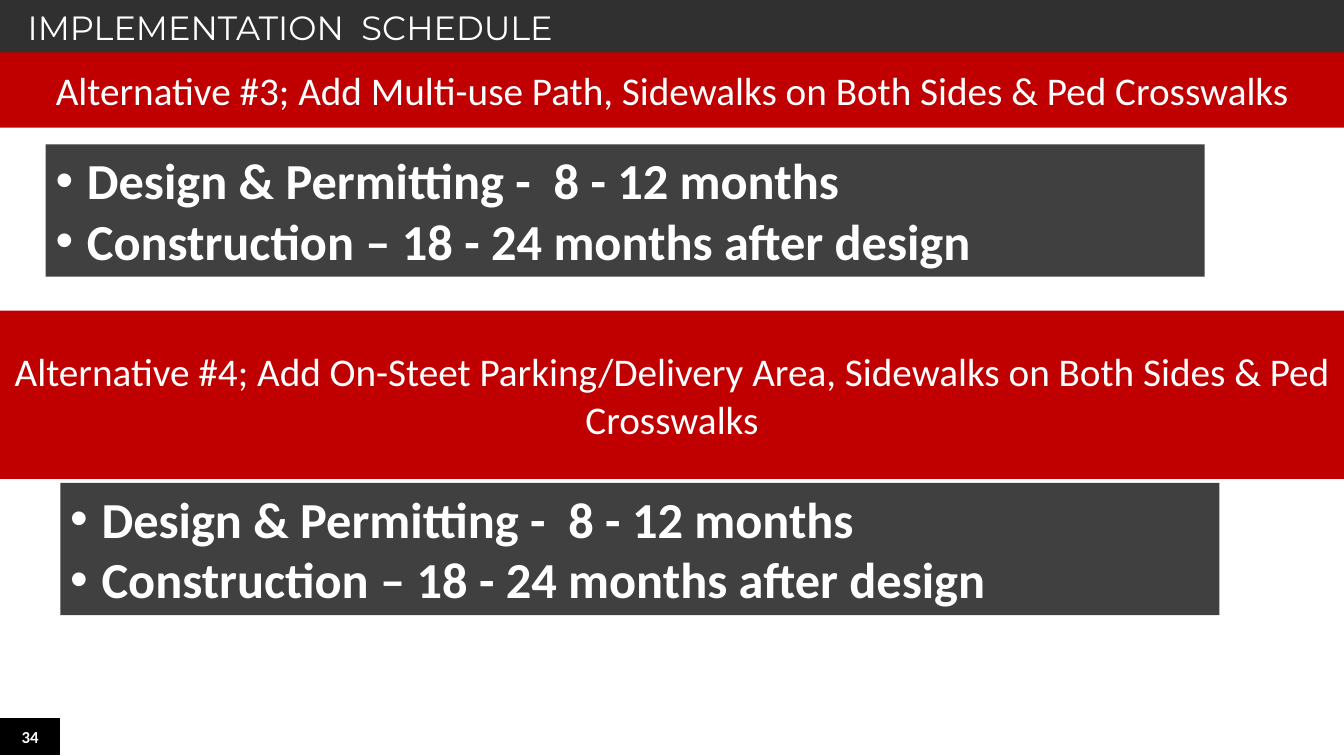
from lxml import etree
from pptx import Presentation
from pptx import util as u
from pptx.dml.color import RGBColor
from pptx.enum import shapes, text
from pptx.oxml.ns import qn

PAGE_WIDTH, PAGE_HEIGHT = 33.87, 19.05
WHITE, BLACK, RED = "FFFFFF", "000000", "C00000"
TITLE_GRAY, LIST_GRAY = "303030", "404040"

PHASES = [
    "Design & Permitting -  8 - 12 months",
    "Construction – 18 - 24 months after design",
]
# heading, heading top and height, phase list left and top
ALTERNATIVES = [
    ("Alternative #3; Add Multi-use Path, Sidewalks on Both Sides & Ped Crosswalks",
     1.32, 1.9, 1.15, 3.64),
    ("Alternative #4; Add On-Steet Parking/Delivery Area, Sidewalks on Both Sides & Ped Crosswalks",
     7.83, 4.24, 1.52, 12.17),
]


def color(value):
    return RGBColor.from_string(value)


def add_panel(page, box, fill, lines, size, font="Calibri", bold=False,
              align=text.PP_ALIGN.LEFT):
    """Add a filled rectangle with white text, one paragraph per line."""
    panel = page.shapes.add_shape(shapes.MSO_SHAPE.RECTANGLE, *map(u.Cm, box))
    panel.shadow.inherit = False
    panel.fill.solid()
    panel.fill.fore_color.rgb = color(fill)
    panel.line.fill.background()
    frame = panel.text_frame
    frame.word_wrap = True
    frame.vertical_anchor = text.MSO_ANCHOR.MIDDLE
    frame.text = "\n".join(lines)
    for para in frame.paragraphs:
        para.alignment = align
        para.font.name = font
        para.font.size = u.Pt(size)
        para.font.bold = bold
        para.font.color.rgb = color(WHITE)
    return panel


def add_bullet(para, indent):
    properties = para._p.get_or_add_pPr()
    properties.set("marL", str(indent))
    properties.set("indent", str(-indent))
    bullet_font = etree.Element(qn("a:buFont"), typeface="Arial")
    bullet = etree.Element(qn("a:buChar"), char="•")
    properties.insert(0, bullet_font)
    bullet_font.addnext(bullet)


def add_title(page, box):
    title = add_panel(page, box, TITLE_GRAY, ["IMPLEMENTATION  SCHEDULE"], 24, "Montserrat")
    title.text_frame.margin_left = u.Cm(0.7)


def add_heading(page, box, heading):
    add_panel(page, box, RED, [heading], 28, align=text.PP_ALIGN.CENTER)


def add_phases(page, box):
    panel = add_panel(page, box, LIST_GRAY, PHASES, 36, bold=True)
    panel.text_frame.vertical_anchor = text.MSO_ANCHOR.TOP
    panel.text_frame.auto_size = text.MSO_AUTO_SIZE.SHAPE_TO_FIT_TEXT
    for para in panel.text_frame.paragraphs:
        add_bullet(para, u.Cm(0.79))


def add_page_number(page, box, number):
    panel = add_panel(page, box, BLACK, [number], 12, bold=True,
                      align=text.PP_ALIGN.CENTER)
    panel.line.color.rgb = color(WHITE)
    panel.line.width = u.Pt(0.75)


def main():
    deck = Presentation()
    deck.slide_width, deck.slide_height = u.Cm(PAGE_WIDTH), u.Cm(PAGE_HEIGHT)
    page = deck.slides.add_slide(deck.slide_layouts[6])
    add_page_number(page, (0, 18.09, 1.52, 0.96), "34")
    add_title(page, (0, 0, PAGE_WIDTH, 1.35))
    for heading, top, height, list_left, list_top in ALTERNATIVES:
        add_heading(page, (0, top, PAGE_WIDTH, height), heading)
        add_phases(page, (list_left, list_top, 29.21, 3.33))
    deck.save("out.pptx")


if __name__ == "__main__":
    main()
